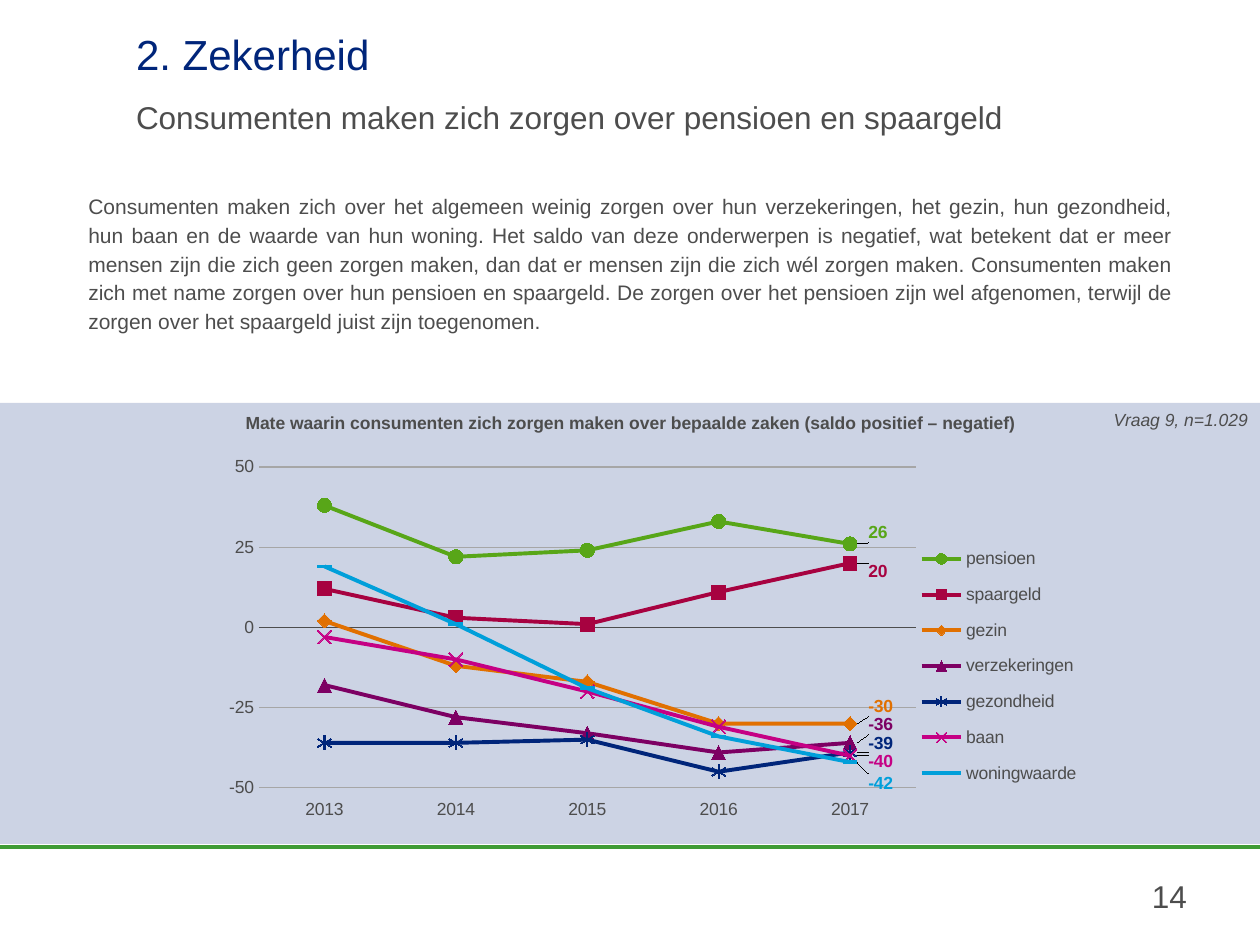
from lxml import etree
from pptx import Presentation
from pptx import util as u
from pptx.chart.data import CategoryChartData
from pptx.dml.color import RGBColor
from pptx.enum import chart as ch
from pptx.enum import shapes, text
from pptx.oxml import parse_xml
from pptx.oxml.ns import nsdecls, qn

EMU_PER_PX = 914400 / 126
FONT = "Arial"
NAVY = RGBColor(0x00, 0x25, 0x7A)
GREY = RGBColor(0x4D, 0x4D, 0x4D)
GRID = RGBColor(0xA6, 0xA6, 0xA6)
GREEN = RGBColor(0x3F, 0x9C, 0x35)
LIME = RGBColor(0x58, 0xA6, 0x18)
CRIMSON = RGBColor(0xA7, 0x02, 0x40)
ORANGE = RGBColor(0xE1, 0x70, 0x00)
PURPLE = RGBColor(0x7D, 0x00, 0x63)
MAGENTA = RGBColor(0xC5, 0x00, 0x84)
CYAN = RGBColor(0x00, 0x9F, 0xDA)

CHART_BOX = (212, 450, 900, 378)
PLOT_BOX = (259, 467, 657, 321)
LEGEND_BOX = (917, 533, 165, 266)
LABEL_SHIFT_X = 6
YEARS = ["2013", "2014", "2015", "2016", "2017"]
MARK = ch.XL_MARKER_STYLE
CONCERNS = [
    ("pensioen", (38, 22, 24, 33, 26), LIME, MARK.CIRCLE, -11),
    ("spaargeld", (12, 3, 1, 11, 20), CRIMSON, MARK.SQUARE, 8),
    ("gezin", (2, -12, -17, -30, -30), ORANGE, MARK.DIAMOND, -17),
    ("verzekeringen", (-18, -28, -33, -39, -36), PURPLE, MARK.TRIANGLE, -18),
    ("gezondheid", (-36, -36, -35, -45, -39), NAVY, MARK.STAR, -9),
    ("baan", (-3, -10, -20, -31, -40), MAGENTA, MARK.X, 6),
    ("woningwaarde", (19, 1, -19, -34, -42), CYAN, MARK.DASH, 21),
]
INTRO = (
    "Consumenten maken zich over het algemeen weinig zorgen over hun verzekeringen, het gezin, "
    "hun gezondheid, hun baan en de waarde van hun woning. Het saldo van deze onderwerpen is "
    "negatief, wat betekent dat er meer mensen zijn die zich geen zorgen maken, dan dat er mensen "
    "zijn die zich wél zorgen maken. Consumenten maken zich met name zorgen over hun pensioen en "
    "spaargeld. De zorgen over het pensioen zijn wel afgenomen, terwijl de zorgen over het "
    "spaargeld juist zijn toegenomen."
)


def px(*lengths):
    return [u.Emu(round(length * EMU_PER_PX)) for length in lengths]


def style(font, size, color, bold=False, italic=False):
    font.name, font.size = FONT, u.Pt(size)
    font.bold, font.italic = bold, italic
    font.color.rgb = color


def add_run(paragraph, words, size, color=GREY, **emphasis):
    run = paragraph.add_run()
    run.text = words
    style(run.font, size, color, **emphasis)


def clear_insets(frame):
    frame.margin_left = frame.margin_right = frame.margin_top = frame.margin_bottom = 0


def add_title(slide, heading, subheading):
    title = slide.shapes.title
    title.left, title.top, title.width, title.height = px(136, 23, 1050, 113)
    frame = title.text_frame
    clear_insets(frame)
    frame.auto_size = text.MSO_AUTO_SIZE.NONE
    frame.vertical_anchor = text.MSO_ANCHOR.BOTTOM
    paragraph = frame.paragraphs[0]
    paragraph.alignment = text.PP_ALIGN.LEFT
    paragraph.line_spacing = 1.5
    add_run(paragraph, heading, 24, NAVY)
    paragraph.add_line_break()
    add_run(paragraph, subheading, 18)


def add_text(slide, box, words, size, align, spacing=None, **emphasis):
    frame = slide.shapes.add_textbox(*px(*box)).text_frame
    frame.word_wrap = True
    paragraph = frame.paragraphs[0]
    paragraph.alignment = align
    paragraph.line_spacing = spacing
    add_run(paragraph, words, size, **emphasis)
    return frame


def add_band(slide, box):
    band = slide.shapes.add_shape(shapes.MSO_SHAPE.RECTANGLE, *px(*box))
    band.shadow.inherit = False
    band.line.fill.background()
    band.fill.solid()
    band.fill.fore_color.rgb = NAVY
    tint = band.fill._xPr.find(f".//{qn('a:srgbClr')}")
    etree.SubElement(tint, qn("a:alpha")).set("val", "20000")


def add_rule(slide, y):
    rule = slide.shapes.add_connector(shapes.MSO_CONNECTOR.STRAIGHT, *px(0, y, 1260, y))
    rule.line.color.rgb = GREEN
    rule.line.width = u.Pt(2.75)
    etree.SubElement(rule._element.spPr, qn("a:effectLst"))


def manual_layout(x, y, size=None, inner=False):
    chart_width, chart_height = CHART_BOX[2:]
    parts = [("layoutTarget", "inner")] if inner else []
    if size:
        parts += [("xMode", "edge"), ("yMode", "edge")]
    parts += [("x", round(x / chart_width, 3)), ("y", round(y / chart_height, 3))]
    if size:
        parts += [("w", round(size[0] / chart_width, 3)), ("h", round(size[1] / chart_height, 3))]
    body = "".join(f'<c:{tag} val="{value}"/>' for tag, value in parts)
    return parse_xml(f"<c:layout {nsdecls('c')}><c:manualLayout>{body}</c:manualLayout></c:layout>")


def box_layout(box, inner=False):
    return manual_layout(box[0] - CHART_BOX[0], box[1] - CHART_BOX[1], box[2:], inner)


def replace_layout(parent, layout, index):
    for old in parent.findall(qn("c:layout")):
        parent.remove(old)
    parent.insert(index, layout)


def label_last_point(series, color, shift_y):
    series.data_labels.show_value = False
    label = series.points[len(YEARS) - 1].data_label
    style(label.font, 10, color, bold=True)
    label.position = ch.XL_LABEL_POSITION.RIGHT
    labels = series.data_labels._element
    replace_layout(labels.find(qn("c:dLbl")), manual_layout(LABEL_SHIFT_X, shift_y), 1)
    labels.append(parse_xml(
        f'<c:extLst {nsdecls("c")}><c:ext uri="{{CE6537A1-D6FC-4f65-9D91-7224C49458BB}}" '
        'xmlns:c15="http://schemas.microsoft.com/office/drawing/2012/chart">'
        '<c15:showLeaderLines val="1"/></c:ext></c:extLst>'))


def style_series(series, color, marker_style, shift_y):
    series.smooth = False
    series.format.line.color.rgb = color
    series.format.line.width = u.Pt(2.25)
    marker = series.marker
    marker.style, marker.size = marker_style, 8
    marker.format.line.color.rgb = color
    if marker_style in (MARK.STAR, MARK.X):
        marker.format.fill.background()
    else:
        marker.format.fill.solid()
        marker.format.fill.fore_color.rgb = color
    label_last_point(series, color, shift_y)


def style_axes(chart):
    years, balance = chart.category_axis, chart.value_axis
    for axis in (years, balance):
        axis.major_tick_mark = axis.minor_tick_mark = ch.XL_TICK_MARK.NONE
        style(axis.tick_labels.font, 10, GREY)
    years.tick_label_position = ch.XL_TICK_LABEL_POSITION.LOW
    years.format.line.color.rgb = GREY
    years.format.line.width = u.Pt(0.75)
    balance.minimum_scale, balance.maximum_scale, balance.major_unit = -50, 50, 25
    balance.tick_labels.number_format = "0"
    balance.tick_labels.number_format_is_linked = False
    balance.format.line.fill.background()
    balance.major_gridlines.format.line.color.rgb = GRID
    balance.major_gridlines.format.line.width = u.Pt(0.75)


def add_concern_chart(slide):
    data = CategoryChartData(number_format="0")
    data.categories = YEARS
    for name, values, *_ in CONCERNS:
        data.add_series(name, values)
    chart = slide.shapes.add_chart(ch.XL_CHART_TYPE.LINE_MARKERS, *px(*CHART_BOX), data).chart
    style(chart.font, 10, GREY)
    chart.has_title = False
    chart.plots[0].vary_by_categories = False
    style_axes(chart)
    for series, (_, _, color, marker_style, shift_y) in zip(chart.plots[0].series, CONCERNS):
        style_series(series, color, marker_style, shift_y)
    chart.has_legend = True
    chart.legend.position = ch.XL_LEGEND_POSITION.RIGHT
    chart.legend.include_in_layout = False
    style(chart.legend.font, 10, GREY)
    replace_layout(chart.legend._element, box_layout(LEGEND_BOX), 1)
    replace_layout(chart._chartSpace.chart.plotArea, box_layout(PLOT_BOX, inner=True), 0)


def main():
    deck = Presentation()
    deck.slide_width, deck.slide_height = px(1260, 945)
    slide = deck.slides.add_slide(deck.slide_layouts[5])
    align = text.PP_ALIGN
    add_rule(slide, 847)
    add_title(slide, "2. Zekerheid", "Consumenten maken zich zorgen over pensioen en spaargeld")
    page_number = add_text(slide, (1071, 877, 116, 42), "14", 18, align.RIGHT)
    clear_insets(page_number)
    add_band(slide, (0, 403, 1260, 441))
    add_concern_chart(slide)
    add_text(slide, (1096, 403, 164, 34), "Vraag 9, n=1.029", 10, align.RIGHT, italic=True)
    add_text(slide, (123, 406, 1014, 34),
             "Mate waarin consumenten zich zorgen maken over bepaalde zaken (saldo positief – negatief)",
             10, align.CENTER, bold=True)
    add_text(slide, (76, 184, 1110, 155), INTRO, 12, align.JUSTIFY, 1.14)
    deck.save("out.pptx")


if __name__ == "__main__":
    main()
